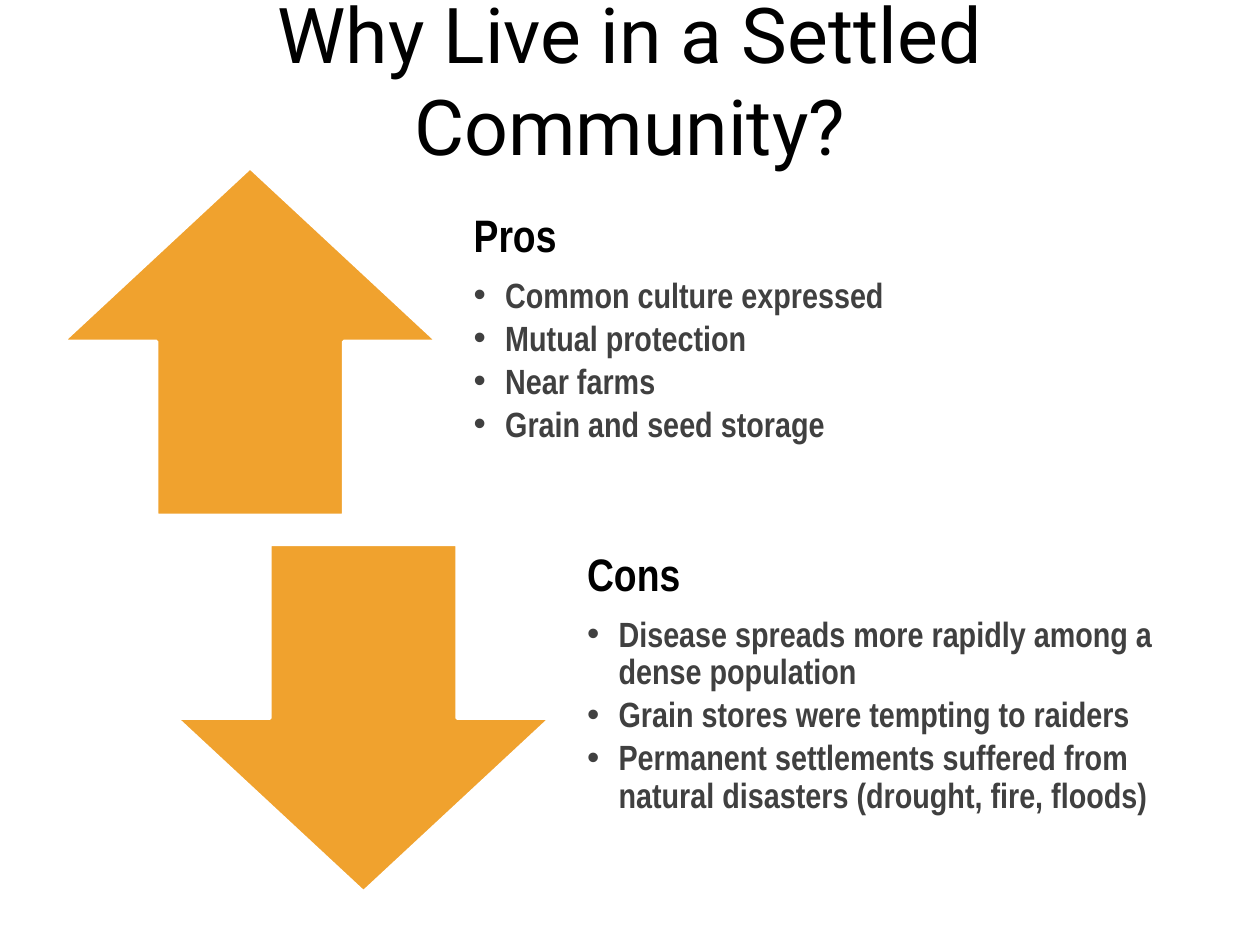
import pptx
import pptx.dml.color
import pptx.enum.shapes
import pptx.enum.text
import pptx.oxml
import pptx.oxml.ns
import pptx.util
from pptx.util import Inches

UP = pptx.enum.shapes.MSO_SHAPE.UP_ARROW
DOWN = pptx.enum.shapes.MSO_SHAPE.DOWN_ARROW
MIDDLE = pptx.enum.text.MSO_ANCHOR.MIDDLE
ARROW_W, GAP, TEXT_W, ROW_H = 2.97, 0.09, 5.04, 2.76
TITLE = {"name": "Roboto", "size": pptx.util.Pt(44), "bold": False}
HEADING = {"name": "Arial Narrow", "size": pptx.util.Pt(26), "bold": True}
BULLET = {**HEADING, "size": pptx.util.Pt(20)}
SIDES = [
    ("Pros", UP, 0.5, 1.33, 0.2, [
        "Common culture expressed",
        "Mutual protection",
        "Near farms",
        "Grain and seed storage",
    ]),
    ("Cons", DOWN, 1.4, 4.32, 0.54, [
        "Disease spreads more rapidly among a dense population",
        "Grain stores were tempting to raiders",
        "Permanent settlements suffered from natural disasters (drought, fire, floods)",
    ]),
]


def rgb(value):
    """Return the colour for a hex string."""
    return pptx.dml.color.RGBColor.from_string(value)


def set_attrs(obj, values):
    """Set each attribute of obj from a dict."""
    for name, value in values.items():
        setattr(obj, name, value)


def add_run(p, text, font, color):
    """Add a formatted run to a paragraph."""
    r = p.add_run()
    r.text = text
    set_attrs(r.font, font)
    r.font.color.rgb = rgb(color)


def add_bullet(p):
    """Give a paragraph a hanging round bullet."""
    pPr = p._p.get_or_add_pPr()
    pPr.set("marL", str(Inches(0.25)))
    pPr.set("indent", str(Inches(-0.25)))
    ns = pptx.oxml.ns.nsdecls("a")
    pPr.append(pptx.oxml.parse_xml(f'<a:buFont {ns} typeface="Arial"/>'))
    pPr.append(pptx.oxml.parse_xml(f'<a:buChar {ns} char="•"/>'))


def add_title(s, text, x, y, w, h):
    """Place and format the title placeholder."""
    sp = s.shapes.title
    set_attrs(sp, {"left": Inches(x), "top": Inches(y),
                   "width": Inches(w), "height": Inches(h)})
    tf = sp.text_frame
    set_attrs(tf, {"word_wrap": True, "vertical_anchor": MIDDLE,
                   "auto_size": pptx.enum.text.MSO_AUTO_SIZE.NONE})
    p = tf.paragraphs[0]
    p.alignment = pptx.enum.text.PP_ALIGN.CENTER
    add_run(p, text, TITLE, "000000")


def add_arrow(shapes, kind, x, y, w, h):
    """Draw a filled block arrow."""
    sp = shapes.add_shape(kind, Inches(x), Inches(y), Inches(w), Inches(h))
    sp.shadow.inherit = False
    sp.fill.solid()
    sp.fill.fore_color.rgb = rgb("F0A22E")
    sp.line.color.rgb = rgb("FFFFFF")
    sp.line.width = pptx.util.Pt(2)


def add_points(shapes, heading, points, bottom, x, y, w, h):
    """Write a heading with its bulleted points."""
    tf = shapes.add_textbox(Inches(x), Inches(y), Inches(w), Inches(h)).text_frame
    set_attrs(tf, {"word_wrap": True, "vertical_anchor": MIDDLE,
                   "margin_left": Inches(0.2), "margin_right": Inches(0.2),
                   "margin_top": 0, "margin_bottom": Inches(bottom)})
    p = tf.paragraphs[0]
    set_attrs(p, {"line_spacing": 0.9, "space_after": pptx.util.Pt(9)})
    add_run(p, heading, HEADING, "000000")
    for point in points:
        p = tf.add_paragraph()
        set_attrs(p, {"level": 1, "line_spacing": 0.9,
                      "space_after": pptx.util.Pt(3)})
        add_bullet(p)
        add_run(p, point, BULLET, "404040")


def add_side(shapes, heading, kind, x, y, bottom, points):
    """Place one arrow and the points beside it."""
    add_arrow(shapes, kind, x, y, ARROW_W, ROW_H)
    add_points(shapes, heading, points, bottom, x + ARROW_W + GAP, y, TEXT_W, ROW_H)


def main():
    """Build and save the slide."""
    prs = pptx.Presentation()
    set_attrs(prs, {"slide_width": Inches(10), "slide_height": Inches(7.5)})
    s = prs.slides.add_slide(prs.slide_layouts[5])
    add_title(s, "Why Live in a Settled Community?", 0.5, 0, 9, 1.25)
    group = s.shapes.add_group_shape()
    for side in SIDES:
        add_side(group.shapes, *side)
    prs.save("out.pptx")


if __name__ == "__main__":
    main()
